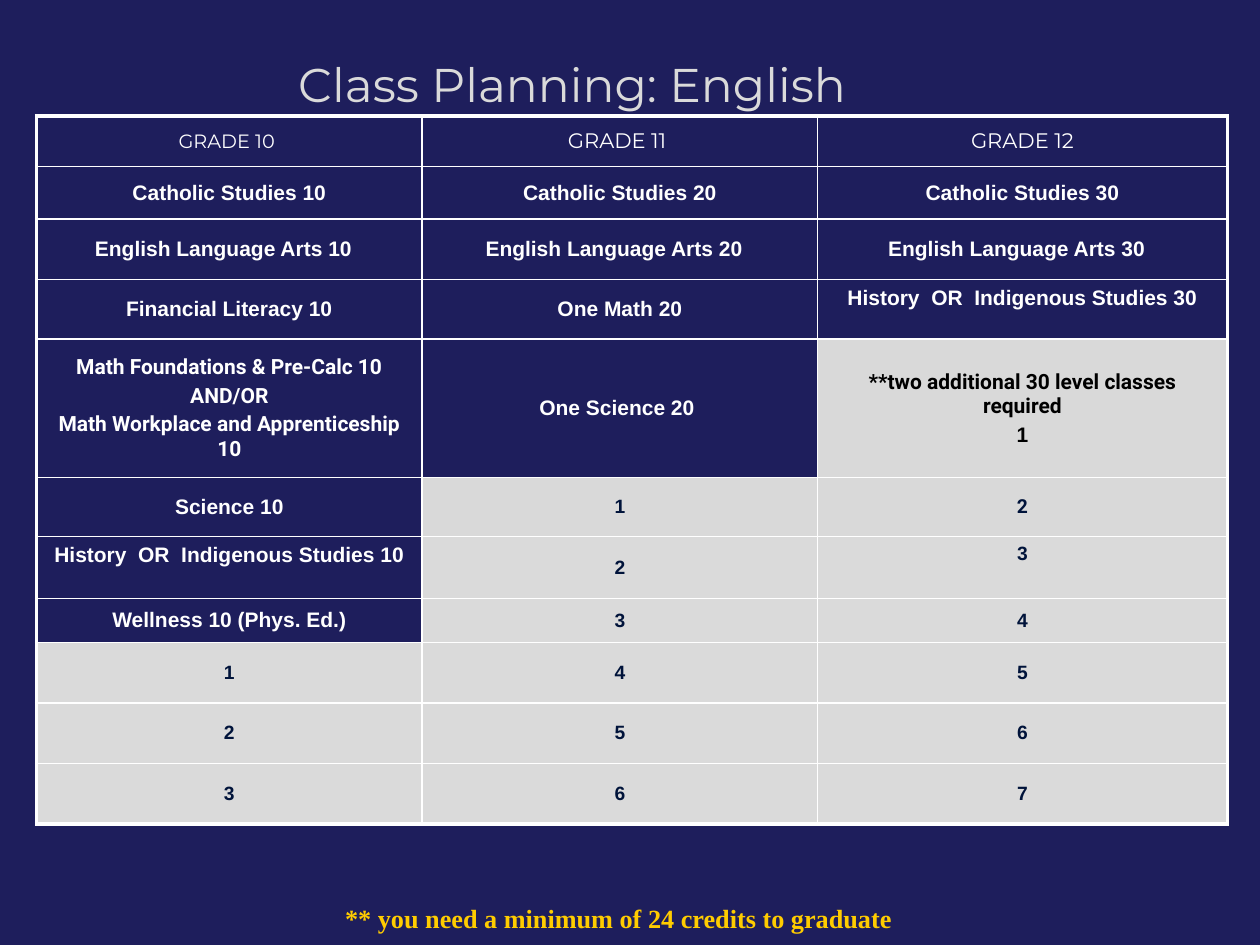
from lxml.etree import SubElement, fromstring
from pptx import Presentation
from pptx.dml.color import RGBColor
from pptx.enum.text import MSO_ANCHOR, PP_ALIGN
from pptx.oxml.ns import qn
from pptx.util import Inches, Pt

COLORS = {
    "navy": "1E1E5C",
    "white": "FFFFFF",
    "silver": "DADADA",
    "gray": "D9D9D9",
    "ink": "00133A",
    "black": "000000",
    "gold": "FFCC00",
    "shade": "404040",
}
DRAWING_NS = "http://schemas.openxmlformats.org/drawingml/2006/main"

COLUMN_WIDTHS = [3.06, 3.14, 3.25]
ROW_HEIGHTS = [0.4, 0.42, 0.48, 0.47, 1.1, 0.47, 0.49, 0.35, 0.48, 0.48, 0.48]
CLASSES = [
    ["GRADE 10 ", "GRADE 11 ", "GRADE 12"],
    ["Catholic Studies 10", "Catholic Studies 20", "Catholic Studies 30"],
    ["English Language Arts 10  ", "English Language Arts 20  ", "English Language Arts 30  "],
    ["Financial Literacy 10", "One Math 20", "History  OR  Indigenous Studies 30"],
    ["Math Foundations & Pre-Calc 10\nAND/OR\nMath Workplace and Apprenticeship 10",
     "One Science 20 ", "**two additional 30 level classes required\n1"],
    ["Science 10", "1", "2"],
    ["History  OR  Indigenous Studies 10", "2", "3"],
    ["Wellness 10 (Phys. Ed.)", "3", "4"],
    ["1", "4", "5"],
    ["2", "5", "6"],
    ["3", "6", "7"],
]
TOP_ANCHORED = {(3, 2), (6, 0), (6, 2)}


def rgb(name):
    return RGBColor.from_string(COLORS[name])


def style_font(font, name, size, color, bold=False):
    font.name, font.size, font.bold = name, Pt(size), bold
    font.color.rgb = rgb(color)


def add_title(slide, left, top, width, height):
    title = slide.shapes.title
    title.left, title.top, title.width, title.height = left, top, width, height
    tf = title.text_frame
    tf.vertical_anchor = MSO_ANCHOR.MIDDLE
    p = tf.paragraphs[0]
    p.alignment = PP_ALIGN.CENTER
    r = p.add_run()
    r.text = "Class Planning: English"
    style_font(r.font, "Montserrat", 27, "silver")
    add_text_effects(r)


def add_text_effects(run):
    """Give the run a faint outline and a soft shadow."""
    fill = run.font._element.find(qn("a:solidFill"))
    fill.addprevious(fromstring(
        f'<a:ln xmlns:a="{DRAWING_NS}" w="9525"><a:solidFill><a:srgbClr val="{COLORS["shade"]}">'
        '<a:alpha val="10000"/></a:srgbClr></a:solidFill></a:ln>'))
    fill.addnext(fromstring(
        f'<a:effectLst xmlns:a="{DRAWING_NS}"><a:outerShdw blurRad="38100" dist="25400" dir="5400000">'
        f'<a:srgbClr val="{COLORS["black"]}"><a:alpha val="50000"/></a:srgbClr>'
        '</a:outerShdw></a:effectLst>'))


def set_borders(cell, row, col):
    """Draw thick lines on the table's outer edge and thin ones inside."""
    outer = {"lnL": col == 0, "lnR": col == len(COLUMN_WIDTHS) - 1,
             "lnT": row == 0, "lnB": row == len(ROW_HEIGHTS) - 1}
    tc_pr = cell._tc.get_or_add_tcPr()
    for tag, thick in outer.items():
        ln = SubElement(tc_pr, qn(f"a:{tag}"), w=str(Pt(2.25 if thick else 1)))
        fill = SubElement(ln, qn("a:solidFill"))
        SubElement(fill, qn("a:srgbClr"), val=COLORS["white"])


def text_style(line, row, col):
    """Return font name, size, colour and weight for a line of a cell."""
    if row == 0:
        return "Montserrat", 11 if col == 0 else 12, "white", False
    if row == 4:
        name = "Arial" if col == 1 or line.isdigit() else "Roboto"
        return name, 12, "black" if col == 2 else "white", True
    if line.isdigit():
        return "Roboto" if (row, col) == (5, 2) else "Arial", 11, "ink", True
    return "Arial", 12, "white", True


def fill_cell(cell, text, row, col):
    lines = text.split("\n")
    set_borders(cell, row, col)
    if lines[-1].isdigit():
        cell.fill.solid()
        cell.fill.fore_color.rgb = rgb("gray" if row < 6 else "silver")
    else:
        cell.fill.background()
    cell.vertical_anchor = MSO_ANCHOR.TOP if (row, col) in TOP_ANCHORED else MSO_ANCHOR.MIDDLE
    tf = cell.text_frame
    for i, line in enumerate(lines):
        p = tf.add_paragraph() if i else tf.paragraphs[0]
        p.alignment = PP_ALIGN.CENTER
        if i:
            p.space_before = Pt(2.4)
        r = p.add_run()
        r.text = line
        style_font(r.font, *text_style(line, row, col))


def add_class_table(slide, left, top, width, height):
    table = slide.shapes.add_table(
        len(ROW_HEIGHTS), len(COLUMN_WIDTHS), left, top, width, height).table
    table.first_row = table.horz_banding = False
    for column, size in zip(table.columns, COLUMN_WIDTHS):
        column.width = Inches(size)
    for table_row, size in zip(table.rows, ROW_HEIGHTS):
        table_row.height = Inches(size)
    for row, texts in enumerate(CLASSES):
        for col, text in enumerate(texts):
            fill_cell(table.cell(row, col), text, row, col)


def add_credit_note(slide, left, top, width, height):
    tf = slide.shapes.add_textbox(left, top, width, height).text_frame
    tf.word_wrap = True
    p = tf.paragraphs[0]
    p.text = "** you need a minimum of 24 credits to graduate"
    style_font(p.font, "Times New Roman", 15, "gold", bold=True)


def main():
    prs = Presentation()
    prs.slide_width, prs.slide_height = Inches(10), Inches(7.5)
    slide = prs.slides.add_slide(prs.slide_layouts[5])
    slide.background.fill.solid()
    slide.background.fill.fore_color.rgb = rgb("navy")
    add_title(slide, Inches(0.29), Inches(0.4), Inches(8.5), Inches(0.52))
    add_class_table(slide, Inches(0.29), Inches(0.92), Inches(9.45), Inches(5.62))
    add_credit_note(slide, Inches(2.64), Inches(7.11), Inches(4.75), Inches(0.35))
    prs.save("out.pptx")


if __name__ == "__main__":
    main()
